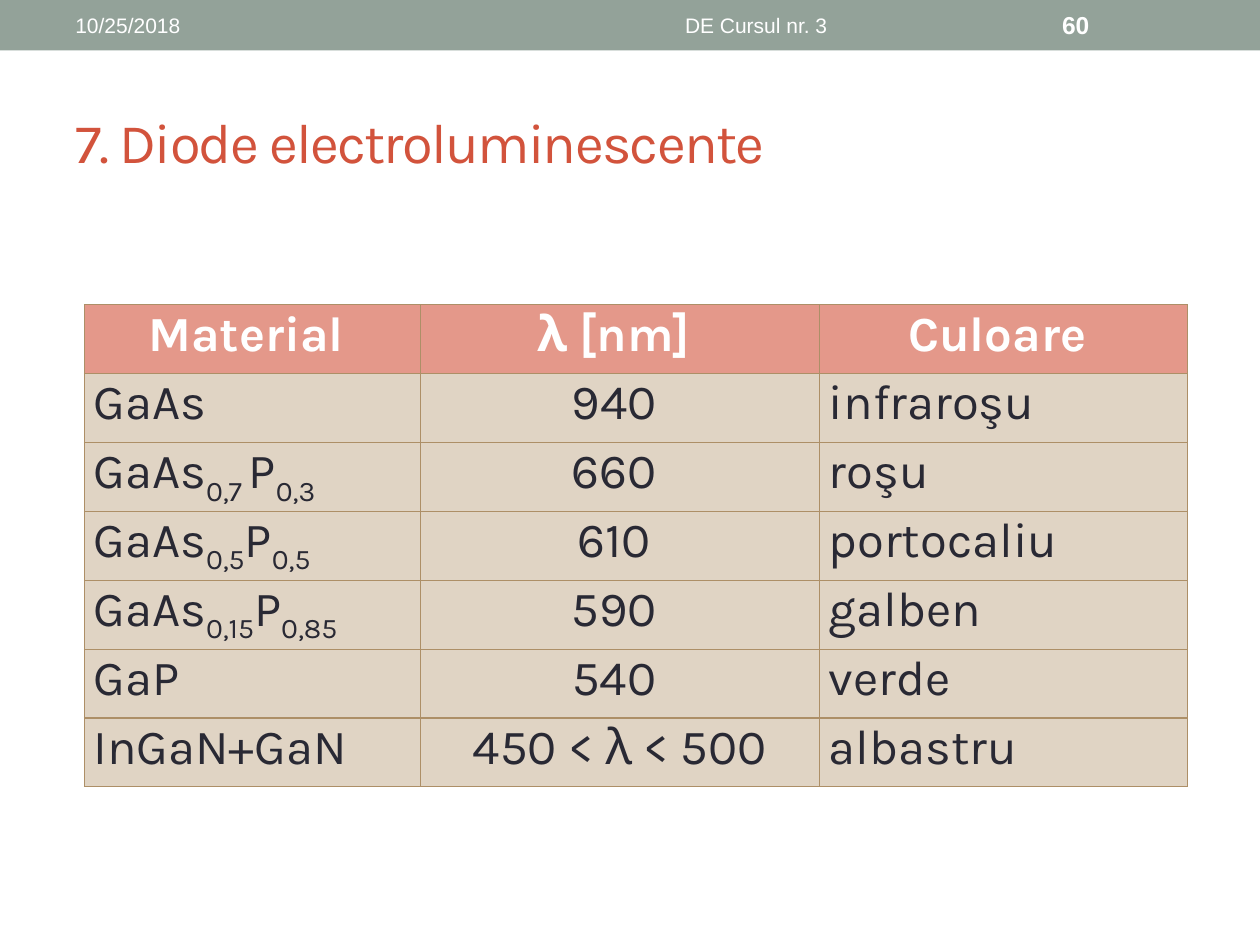
from lxml import etree
from pptx import Presentation
from pptx import util as u
from pptx.dml.color import RGBColor
from pptx.enum import shapes, text
from pptx.oxml.ns import qn

COLORS = {
    "band": "93A299",
    "title": "D2533C",
    "header": "E4988A",
    "body": "E0D4C4",
    "border": "AD8F67",
    "ink": "292934",
    "white": "FFFFFF",
}
CENTER = text.PP_ALIGN.CENTER
LEFT = text.PP_ALIGN.LEFT


def add_run(paragraph, words, size, font, color, bold=False, **attributes):
    run = paragraph.add_run()
    run.text = words
    run.font.size = u.Pt(size)
    run.font.name = font
    run.font.bold = bold
    run.font.color.rgb = RGBColor.from_string(COLORS[color])
    for key, value in attributes.items():
        run._r.get_or_add_rPr().set(key, str(value))


def add_label(box, words, size, font, color, align=LEFT, bold=False, **attributes):
    label = slide.shapes.add_textbox(*[u.Cm(length) for length in box])
    frame = label.text_frame
    frame.word_wrap = True
    frame.vertical_anchor = text.MSO_ANCHOR.MIDDLE
    frame.paragraphs[0].alignment = align
    add_run(frame.paragraphs[0], words, size, font, color, bold, **attributes)


prs = Presentation()
prs.slide_width = u.Cm(25.4)
prs.slide_height = u.Cm(19.05)
slide = prs.slides.add_slide(prs.slide_layouts[6])

band = slide.shapes.add_shape(
    shapes.MSO_SHAPE.RECTANGLE, 0, 0, prs.slide_width, u.Cm(1.02))
band.shadow.inherit = False
band.fill.solid()
band.fill.fore_color.rgb = RGBColor.from_string(COLORS["band"])
band.line.fill.background()

add_label((1.27, 1.48, 22.86, 2.74), "7. Diode electroluminescente",
          32, "Karla", "title", spc=-100)

materials = [
    (["Material "], "λ [nm] ", "Culoare "),
    (["GaAs"], "940 ", "infraroşu"),
    (["GaAs", "0,7 ", "P", "0,3"], "660 ", "roşu"),
    (["GaAs", "0,5", "P", "0,5"], "610 ", "portocaliu"),
    (["GaAs", "0,15", "P", "0,85"], "590 ", "galben"),
    (["GaP"], "540 ", "verde"),
    (["InGaN+GaN"], "450 < λ < 500", "albastru"),
]
column_widths = [6.77, 8.05, 7.41]
row_height = 1.39

diodes = slide.shapes.add_table(
    len(materials), len(column_widths), u.Cm(1.7), u.Cm(6.14),
    u.Cm(sum(column_widths)), u.Cm(row_height * len(materials))).table
for column, width in zip(diodes.columns, column_widths):
    column.width = u.Cm(width)

for r, (formula, wavelength, color_name) in enumerate(materials):
    diodes.rows[r].height = u.Cm(row_height)
    is_header = r == 0
    for c, pieces in enumerate([formula, [wavelength], [color_name]]):
        cell = diodes.cell(r, c)
        cell.margin_left = cell.margin_right = u.Cm(0.19)
        cell.margin_top = u.Cm(0.03)
        cell.margin_bottom = 0
        for side in ("a:lnL", "a:lnR", "a:lnT", "a:lnB"):
            border = etree.SubElement(
                cell._tc.get_or_add_tcPr(), qn(side), w=str(u.Pt(0.75)))
            paint = etree.SubElement(border, qn("a:solidFill"))
            etree.SubElement(paint, qn("a:srgbClr"), val=COLORS["border"])
        cell.fill.solid()
        cell.fill.fore_color.rgb = RGBColor.from_string(
            COLORS["header" if is_header else "body"])
        paragraph = cell.text_frame.paragraphs[0]
        paragraph.alignment = CENTER if is_header or c == 1 else LEFT
        for i, piece in enumerate(pieces):
            subscript = {"baseline": -25000} if i % 2 else {}
            add_run(paragraph, piece, 28, "Karla",
                    "white" if is_header else "ink", is_header, **subscript)

add_label((1.27, 0.05, 8.05, 0.91), "10/25/2018", 12, "Arial", "white")
add_label((9.53, 0.05, 11.43, 0.91), "DE Cursul nr. 3", 12, "Arial", "white", CENTER)
add_label((21.16, 0.05, 2.97, 0.91), "60", 14, "Arial", "white", bold=True)

prs.save("out.pptx")
